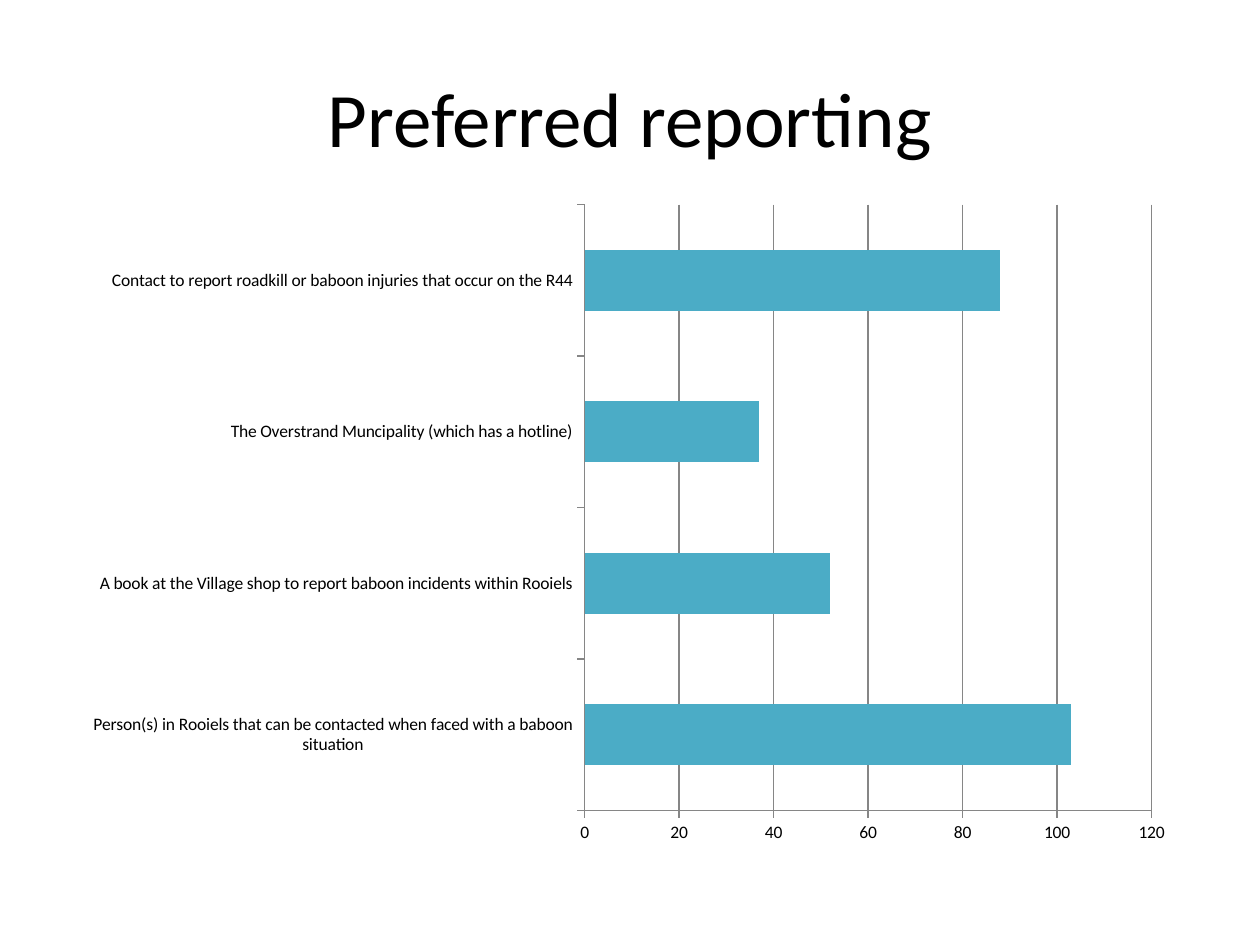
import pptx
import pptx.chart.data
import pptx.dml.color
import pptx.enum.chart
import pptx.enum.text
import pptx.oxml
import pptx.oxml.ns
import pptx.util
from typing import NamedTuple

Cm, Pt = pptx.util.Cm, pptx.util.Pt
FONT = "Calibri"
BLACK, TEAL, GREY = "000000", "4BACC6", "868686"


class Answer(NamedTuple):
    label: str
    count: int


ANSWERS = [
    Answer("Person(s) in Rooiels that can be contacted when faced with a baboon situation", 103),
    Answer("A book at the Village shop to report baboon incidents within Rooiels", 52),
    Answer("The Overstrand Muncipality (which has a hotline)", 37),
    Answer("Contact to report roadkill or baboon injuries that occur on the R44", 88),
]


def rgb(value: str) -> pptx.dml.color.RGBColor:
    return pptx.dml.color.RGBColor.from_string(value)


def format_font(font, size: float, color: str = BLACK) -> None:
    font.name, font.size, font.bold = FONT, Pt(size), False
    font.color.rgb = rgb(color)


def write_text(tf, text: str, *, size: float, color: str = BLACK,
               align=pptx.enum.text.PP_ALIGN.CENTER,
               anchor=pptx.enum.text.MSO_ANCHOR.MIDDLE) -> None:
    tf.word_wrap = True
    tf.vertical_anchor = anchor
    p = tf.paragraphs[0]
    p.alignment = align
    r = p.add_run()
    r.text = text
    format_font(r.font, size, color)


def format_line(line, color: str = GREY, width: float = 0.75) -> None:
    line.color.rgb = rgb(color)
    line.width = Pt(width)


def set_plot_layout(chart, x: float, y: float, w: float, h: float) -> None:
    """Fix the inner plot area, in fractions of the chart."""
    values = {"x": x, "y": y, "w": w, "h": h}
    modes = "".join(f'<c:{k}Mode val="edge"/>' for k in "xy")
    sizes = "".join(f'<c:{k} val="{v}"/>' for k, v in values.items())
    layout = pptx.oxml.parse_xml(
        f'<c:layout {pptx.oxml.ns.nsdecls("c")}><c:manualLayout>'
        f'<c:layoutTarget val="inner"/>{modes}{sizes}'
        '</c:manualLayout></c:layout>')
    plot_area = chart._chartSpace.chart.plotArea
    for old in plot_area.findall(pptx.oxml.ns.qn("c:layout")):
        plot_area.remove(old)
    plot_area.insert(0, layout)


def add_bar_chart(slide, answers: list[Answer]) -> None:
    data = pptx.chart.data.CategoryChartData()
    data.categories = [a.label for a in answers]
    data.add_series("Series 1", [a.count for a in answers])
    chart = slide.shapes.add_chart(
        pptx.enum.chart.XL_CHART_TYPE.BAR_CLUSTERED,
        Cm(1.27), Cm(4.11), Cm(22.86), Cm(13.59), data).chart
    chart.has_legend = chart.has_title = False
    format_font(chart.font, 10)

    plot = chart.plots[0]
    plot.gap_width = 150
    plot.vary_by_categories = False
    fill = plot.series[0].format.fill
    fill.solid()
    fill.fore_color.rgb = rgb(TEAL)

    for axis in (chart.category_axis, chart.value_axis):
        axis.major_tick_mark = pptx.enum.chart.XL_TICK_MARK.OUTSIDE
        axis.minor_tick_mark = pptx.enum.chart.XL_TICK_MARK.NONE
        format_line(axis.format.line)
        format_font(axis.tick_labels.font, 10)
    axis = chart.value_axis
    axis.minimum_scale, axis.maximum_scale, axis.major_unit = 0, 120, 20
    axis.has_major_gridlines = True
    format_line(axis.major_gridlines.format.line)
    set_plot_layout(chart, 0.46, 0, 0.5, 0.9)


def main() -> None:
    prs = pptx.Presentation()
    prs.slide_width, prs.slide_height = Cm(25.4), Cm(19.05)
    slide = prs.slides.add_slide(prs.slide_layouts[5])
    title = slide.shapes.title
    title.left, title.top, title.width, title.height = Cm(1.27), Cm(0.76), Cm(22.86), Cm(3.18)
    write_text(title.text_frame, "Preferred reporting", size=44)
    add_bar_chart(slide, ANSWERS)
    prs.save("out.pptx")


if __name__ == "__main__":
    main()
